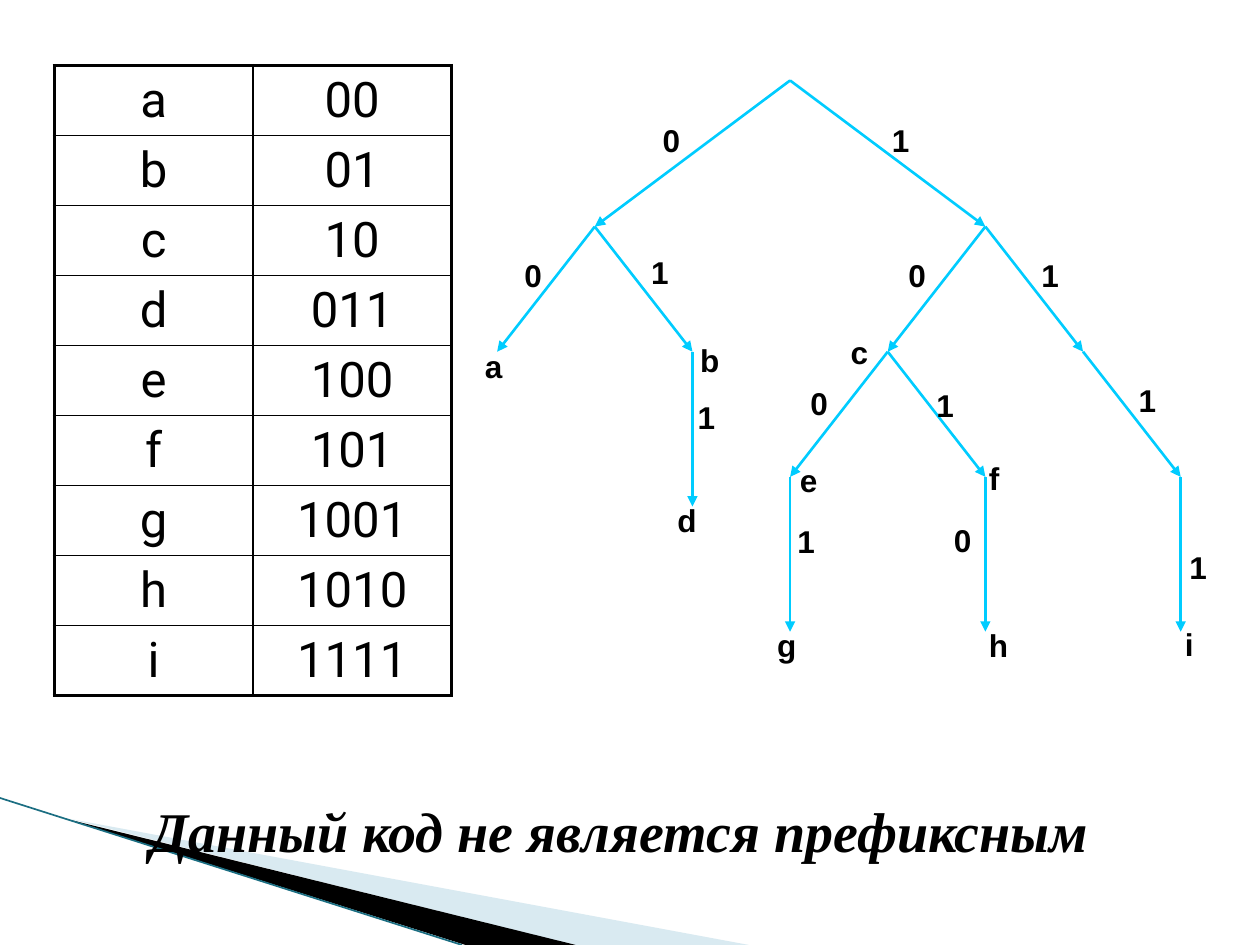
from lxml import etree
from pptx import Presentation
from pptx.dml.color import RGBColor
from pptx.enum import shapes, text
from pptx.oxml import ns
from pptx.util import Pt

# Content
CODES = [("a", "00"), ("b", "01"), ("c", "10"), ("d", "011"), ("e", "100"),
         ("f", "101"), ("g", "1001"), ("h", "1010"), ("i", "1111")]
STATEMENT = "Данный код не является префиксным"

# Tree nodes, parents first: code -> (column, corner of the bit label)
BRANCHES = {
    "0": (1, (371.5, 65.5)), "1": (5, (502.5, 65.5)),
    "00": (0, (292.5, 142.5)), "01": (2, (365, 141)),
    "10": (4, (512, 143)), "11": (6, (588, 142.5)),
    "011": (2, (391.5, 224)), "100": (3, (456, 216)),
    "101": (5, (528, 217)), "111": (7, (643.5, 214)),
    "1001": (3, (448.5, 295)), "1010": (5, (538, 294)),
    "1111": (7, (672.5, 309.5)),
}
LETTER_CORNERS = {
    "a": (270, 194.5), "b": (393, 191.5), "c": (479, 187),
    "d": (380, 283), "e": (450, 260), "f": (558, 258.5),
    "g": (437, 354), "h": (558, 354), "i": (670, 353.5),
}

THEME = {
    "ink": "000000", "arrow": "00CCFF", "pale": "A0CBDC", "edge": "1B6E82",
    "table": ("Roboto", 28), "label": ("Arial", 18),
    "statement": ("Times New Roman", 32),
}
TABLE_LEFT, TABLE_TOP, COLUMN_WIDTH, ROW_HEIGHT = 31, 37.5, 113.5, 40
ROOT, COLUMN_STEP = (451.5, 46), 55.8
FIRST_DROP, BRANCH_DROP, STRAIGHT_DROP = 83.5, 71.5, 88.5

deck = Presentation()
deck.slide_width, deck.slide_height = Pt(720), Pt(540)
page = deck.slides.add_slide(deck.slide_layouts[6])


def colour(name):
    return RGBColor.from_string(THEME[name])


def write(para, words, style, bold=False, italic=False):
    span = para.add_run()
    span.text = words
    span.font.name, size = THEME[style]
    span.font.size = Pt(size)
    span.font.bold, span.font.italic = bold, italic
    span.font.color.rgb = colour("ink")


def add_text(left, top, width, height, words, style, centred=False, italic=False):
    box = page.shapes.add_textbox(Pt(left), Pt(top), Pt(width), Pt(height))
    box.text_frame.word_wrap = True
    box.text_frame.auto_size = text.MSO_AUTO_SIZE.SHAPE_TO_FIT_TEXT
    para = box.text_frame.paragraphs[0]
    para.alignment = text.PP_ALIGN.CENTER if centred else text.PP_ALIGN.LEFT
    write(para, words, style, True, italic)


def add_line(start, end, shade, weight, arrow=False):
    line = page.shapes.add_connector(
        shapes.MSO_CONNECTOR.STRAIGHT, *(Pt(v) for v in (*start, *end)))
    line.line.color.rgb = colour(shade)
    line.line.width = Pt(weight)
    if arrow:
        outline = line.line._get_or_add_ln()
        etree.SubElement(outline, ns.qn("a:tailEnd"), type="triangle")
    etree.SubElement(line._element.spPr, ns.qn("a:effectLst"))


def add_wedge(points, shade, opacity=100):
    builder = page.shapes.build_freeform(*points[0], scale=Pt(1))
    builder.add_line_segments(points[1:], close=True)
    wedge = builder.convert_to_shape()
    wedge.shadow.inherit = False
    wedge.line.fill.background()
    wedge.fill.solid()
    wedge.fill.fore_color.rgb = colour(shade)
    if opacity < 100:
        tint = wedge._element.spPr.find(".//" + ns.qn("a:srgbClr"))
        etree.SubElement(tint, ns.qn("a:alpha"), val=str(opacity * 1000))


def set_borders(cell, weights):
    properties = cell._tc.get_or_add_tcPr()
    for place, (side, weight) in enumerate(weights.items()):
        border = etree.Element(ns.qn("a:ln" + side), w=str(Pt(weight)))
        fill = etree.SubElement(border, ns.qn("a:solidFill"))
        etree.SubElement(fill, ns.qn("a:srgbClr"), val=THEME["ink"])
        properties.insert(place, border)


# Corner decoration
add_wedge([(39.5, 468), (428, 540), (328, 540)], "pale", 40)
add_wedge([(38.5, 467.5), (329, 540), (266, 540)], "ink")
add_line((0, 456), (264, 540), "edge", 0.95)

# Code table
frame = page.shapes.add_table(
    len(CODES), 2, Pt(TABLE_LEFT), Pt(TABLE_TOP),
    Pt(2 * COLUMN_WIDTH), Pt(len(CODES) * ROW_HEIGHT))
grid = frame.table
grid.first_row = grid.horz_banding = False
for row, pair in enumerate(CODES):
    grid.rows[row].height = Pt(ROW_HEIGHT)
    for column, words in enumerate(pair):
        cell = grid.cell(row, column)
        cell.fill.background()
        para = cell.text_frame.paragraphs[0]
        para.alignment = text.PP_ALIGN.CENTER
        write(para, words, "table")
        outer = {"L": column == 0, "R": column == 1,
                 "T": row == 0, "B": row == len(CODES) - 1}
        set_borders(cell, {side: 2.25 if on else 1 for side, on in outer.items()})

# Code tree: a child in its parent's column hangs straight below it
columns, spots = {"": 3}, {"": ROOT}
for code, (column, corner) in BRANCHES.items():
    parent = code[:-1]
    if not parent:
        drop = FIRST_DROP
    elif column == columns[parent]:
        drop = STRAIGHT_DROP
    else:
        drop = BRANCH_DROP
    columns[code] = column
    spots[code] = (ROOT[0] + (column - 3) * COLUMN_STEP, spots[parent][1] + drop)
    add_line(spots[parent], spots[code], "arrow", 1.5, arrow=True)
    add_text(*corner, 39.5, 29, code[-1], "label")

for letter, corner in LETTER_CORNERS.items():
    add_text(*corner, 39.5, 29, letter, "label")

# Statement
add_text(19.5, 451.5, 669, 45.5, STATEMENT, "statement", centred=True, italic=True)

deck.save("out.pptx")
